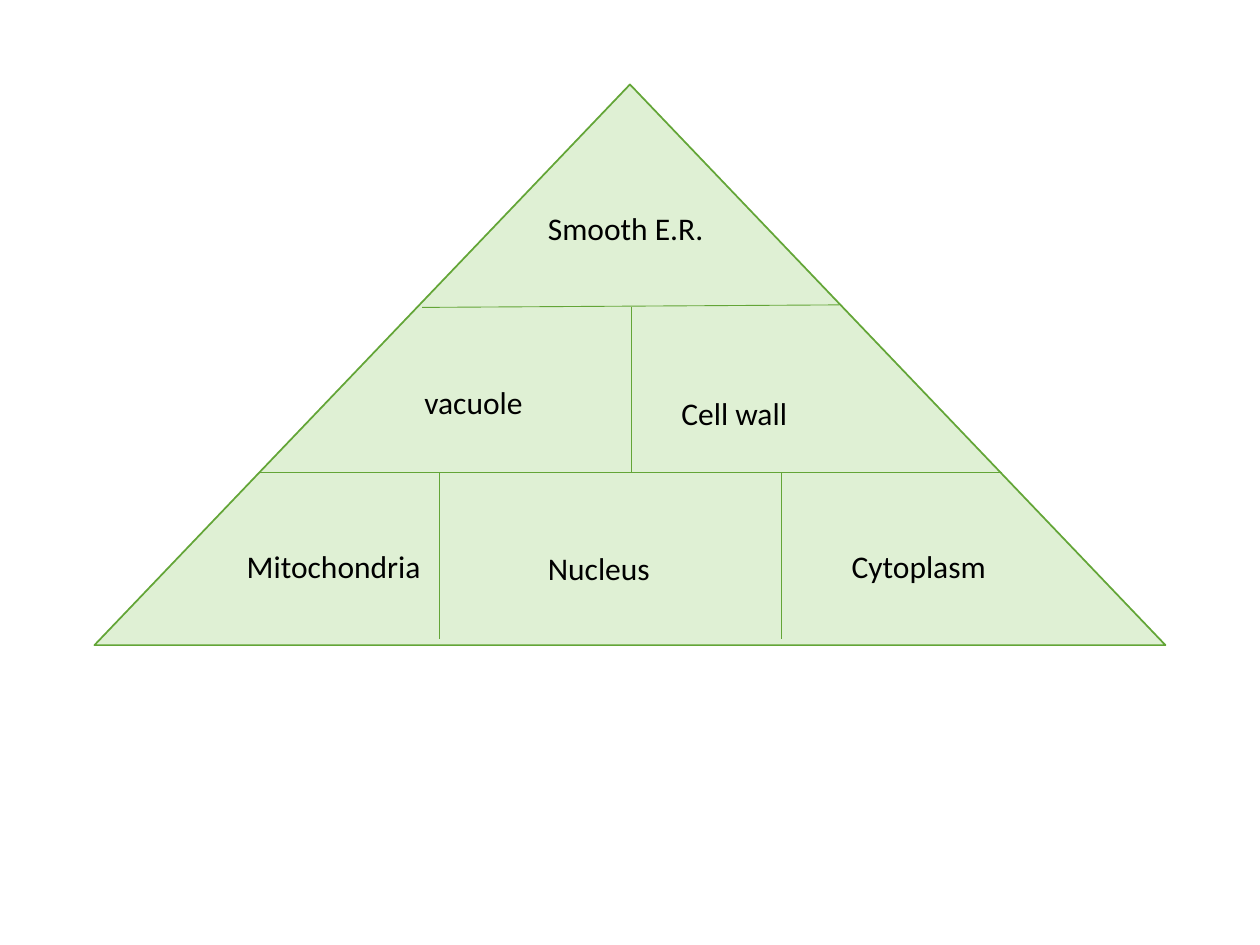
from dataclasses import dataclass

from pptx import Presentation
from pptx.dml.color import RGBColor
from pptx.enum.shapes import MSO_CONNECTOR, MSO_SHAPE
from pptx.enum.text import MSO_AUTO_SIZE
from pptx.oxml.ns import qn
from pptx.slide import Slide
from pptx.util import Inches, Pt
from lxml.etree import SubElement


@dataclass(frozen=True)
class Theme:
    fill: RGBColor = RGBColor(0xDF, 0xF0, 0xD4)
    line: RGBColor = RGBColor(0x63, 0xA5, 0x37)
    text: RGBColor = RGBColor(0, 0, 0)
    font: str = "Calibri"
    text_size: Pt = Pt(18)
    outline_width: Pt = Pt(1)
    divider_width: Pt = Pt(0.5)


@dataclass(frozen=True)
class Divider:
    start_x: float
    start_y: float
    end_x: float
    end_y: float


@dataclass(frozen=True)
class Label:
    text: str
    left: float
    top: float
    width: float


THEME = Theme()
LABEL_HEIGHT = 0.4

# Heights at which the pyramid's tiers meet
UPPER, LOWER, BASE = 2.44, 3.75, 5.07

DIVIDERS = [
    Divider(2.06, LOWER, 7.95, LOWER),
    Divider(3.35, UPPER, 6.66, 2.42),
    Divider(5.01, UPPER, 5.01, LOWER),
    Divider(3.49, LOWER, 3.49, BASE),
    Divider(6.2, LOWER, 6.2, BASE),
]

LABELS = [
    Label("Smooth E.R.", 4.25, 1.61, 1.63),
    Label("vacuole", 3.27, 2.99, 1.74),
    Label("Cell wall", 5.31, 3.08, 1.77),
    Label("Mitochondria", 1.86, 4.29, 1.74),
    Label("Nucleus", 4.25, 4.31, 1.52),
    Label("Cytoplasm", 6.66, 4.29, 1.29),
]


def draw_pyramid(slide: Slide) -> None:
    shape = slide.shapes.add_shape(
        MSO_SHAPE.ISOSCELES_TRIANGLE, Inches(0.75), Inches(0.67), Inches(8.5), Inches(4.45)
    )
    shape.shadow.inherit = False
    shape.fill.solid()
    shape.fill.fore_color.rgb = THEME.fill
    shape.line.color.rgb = THEME.line
    shape.line.width = THEME.outline_width


def draw_divider(slide: Slide, divider: Divider) -> None:
    connector = slide.shapes.add_connector(
        MSO_CONNECTOR.STRAIGHT,
        Inches(divider.start_x), Inches(divider.start_y),
        Inches(divider.end_x), Inches(divider.end_y),
    )
    connector.line.color.rgb = THEME.line
    connector.line.width = THEME.divider_width
    SubElement(connector._element.spPr, qn("a:effectLst"))


def draw_label(slide: Slide, label: Label) -> None:
    box = slide.shapes.add_textbox(
        Inches(label.left), Inches(label.top), Inches(label.width), Inches(LABEL_HEIGHT)
    )
    frame = box.text_frame
    frame.word_wrap = True
    frame.auto_size = MSO_AUTO_SIZE.SHAPE_TO_FIT_TEXT
    paragraph = frame.paragraphs[0]
    run = paragraph.add_run()
    run.text = label.text
    for name, value in {"name": THEME.font, "size": THEME.text_size}.items():
        setattr(run.font, name, value)
    run.font.color.rgb = THEME.text


def main() -> None:
    presentation = Presentation()
    presentation.slide_width = Inches(10)
    presentation.slide_height = Inches(7.5)
    slide = presentation.slides.add_slide(presentation.slide_layouts[6])

    # Pyramid, its tier and cell dividers, then the cell names
    draw_pyramid(slide)
    for divider in DIVIDERS:
        draw_divider(slide, divider)
    for label in LABELS:
        draw_label(slide, label)

    presentation.save("out.pptx")


if __name__ == "__main__":
    main()
